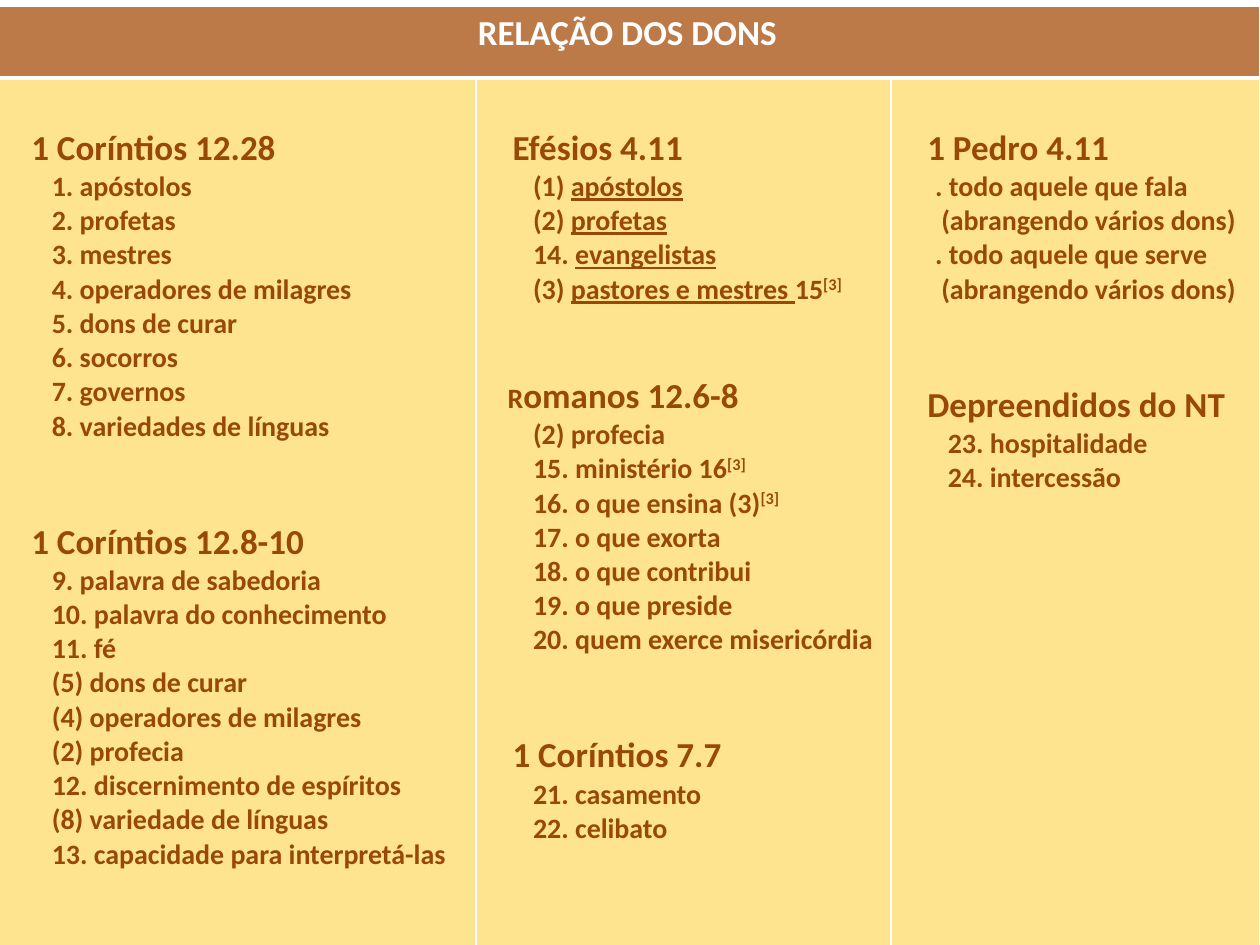
from dataclasses import dataclass

from lxml.etree import SubElement
from pptx import Presentation
from pptx.dml.color import RGBColor
from pptx.enum.text import PP_ALIGN
from pptx.oxml.ns import qn
from pptx.util import Pt


@dataclass(frozen=True)
class Theme:
    font: str = "Calibri"
    heading_size: int = 20
    item_size: int = 16
    banner: str = "BC7A48"
    panel: str = "FFE48F"
    text: str = "984807"
    white: str = "FFFFFF"


THEME = Theme()
COLUMN_WIDTHS = (275, 237, 211)
ROW_HEIGHTS = (41, 509)
CELL_TOP = 28
SECTION_GAP = 44
# Left margin and first-line indent
HEADING_INDENT = (13.6, 0)
ITEM_INDENT = (25.3, 0)
HANGING_INDENT = (21.6, -3.5)


@dataclass(frozen=True)
class Section:
    heading: str
    items: tuple
    gap: float = SECTION_GAP
    heading_indent: tuple = HEADING_INDENT
    item_indent: tuple = ITEM_INDENT
    small_initial: bool = False


@dataclass(frozen=True)
class Underlined:
    text: str


@dataclass(frozen=True)
class Superscript:
    text: str


NOTE = Superscript("[3]")

COLUMNS = (
    (
        Section("1 Coríntios 12.28", (
            "1. apóstolos", "2. profetas", "3. mestres",
            "4. operadores de milagres", "5. dons de curar", "6. socorros",
            "7. governos", "8. variedades de línguas",
        )),
        Section("1 Coríntios 12.8-10", (
            "9. palavra de sabedoria", "10. palavra do conhecimento", "11. fé",
            "(5) dons de curar", "(4) operadores de milagres", "(2) profecia",
            "12. discernimento de espíritos", "(8) variedade de línguas",
            "13. capacidade para interpretá-las",
        )),
    ),
    (
        Section("Efésios 4.11", (
            ("(1) ", Underlined("apóstolos")),
            ("(2) ", Underlined("profetas")),
            ("14. ", Underlined("evangelistas")),
            ("(3) ", Underlined("pastores e mestres "), "15", NOTE),
        )),
        Section("Romanos 12.6-8", (
            "(2) profecia", ("15. ministério 16", NOTE),
            ("16. o que ensina (3)", NOTE), "17. o que exorta",
            "18. o que contribui", "19. o que preside",
            "20. quem exerce misericórdia",
        ), gap=39, heading_indent=(10.8, 0), small_initial=True),
        Section("1 Coríntios 7.7", ("21. casamento", "22. celibato")),
    ),
    (
        Section("1 Pedro 4.11", (
            ". todo aquele que fala (abrangendo vários dons)",
            ". todo aquele que serve (abrangendo vários dons)",
        ), item_indent=HANGING_INDENT),
        Section("Depreendidos do NT", ("23. hospitalidade", "24. intercessão")),
    ),
)


def style_paragraph(paragraph, color, size=None, indent=(0, 0)):
    properties = paragraph._p.get_or_add_pPr()
    for name, value in zip(("marL", "indent"), indent):
        properties.set(name, str(Pt(value)))
    font = paragraph.font
    font.name = THEME.font
    font.bold = True
    font.color.rgb = RGBColor.from_string(color)
    if size:
        font.size = Pt(size)


def add_part(paragraph, part):
    """Add plain, underlined or superscript text as one run."""
    run = paragraph.add_run()
    run.text = part if isinstance(part, str) else part.text
    if isinstance(part, Underlined):
        run.font.underline = True
    elif isinstance(part, Superscript):
        run._r.get_or_add_rPr().set("baseline", "30000")
    return run


def write_heading(paragraph, section):
    size = None if section.small_initial else THEME.heading_size
    style_paragraph(paragraph, THEME.text, size, section.heading_indent)
    if section.small_initial:
        add_part(paragraph, section.heading[0]).font.size = Pt(THEME.item_size)
        add_part(paragraph, section.heading[1:]).font.size = Pt(THEME.heading_size)
    else:
        add_part(paragraph, section.heading)


def write_sections(cell, sections):
    cell.margin_top = Pt(CELL_TOP)
    frame = cell.text_frame
    for number, section in enumerate(sections):
        heading = frame.add_paragraph() if number else frame.paragraphs[0]
        write_heading(heading, section)
        if number:
            heading.space_before = Pt(section.gap)
        for item in section.items:
            paragraph = frame.add_paragraph()
            style_paragraph(paragraph, THEME.text, THEME.item_size, section.item_indent)
            for part in (item,) if isinstance(item, str) else item:
                add_part(paragraph, part)


def paint_cell(cell, fill, top=1, bottom=1):
    properties = cell._tc.get_or_add_tcPr()
    for side, width in (("L", 1), ("R", 1), ("T", top), ("B", bottom)):
        line = SubElement(properties, qn(f"a:ln{side}"), w=str(Pt(width)))
        line_fill = SubElement(line, qn("a:solidFill"))
        SubElement(line_fill, qn("a:srgbClr"), val=THEME.white)
    cell.fill.solid()
    cell.fill.fore_color.rgb = RGBColor.from_string(fill)


def add_gifts_table(slide):
    table = slide.shapes.add_table(
        len(ROW_HEIGHTS), len(COLUMN_WIDTHS), Pt(-2.9), Pt(3.6),
        Pt(sum(COLUMN_WIDTHS)), Pt(sum(ROW_HEIGHTS)),
    ).table
    table.first_row = table.horz_banding = False
    for column, width in zip(table.columns, COLUMN_WIDTHS):
        column.width = Pt(width)
    for row, height in zip(table.rows, ROW_HEIGHTS):
        row.height = Pt(height)

    for index, sections in enumerate(COLUMNS):
        paint_cell(table.cell(0, index), THEME.banner, bottom=3)
        paint_cell(table.cell(1, index), THEME.panel, top=3)
        write_sections(table.cell(1, index), sections)

    banner = table.cell(0, 0)
    banner.merge(table.cell(0, len(COLUMNS) - 1))
    title = banner.text_frame.paragraphs[0]
    title.alignment = PP_ALIGN.CENTER
    style_paragraph(title, THEME.white, THEME.heading_size)
    add_part(title, "RELAÇÃO DOS DONS")


def main():
    presentation = Presentation()
    presentation.slide_width = Pt(720)
    presentation.slide_height = Pt(540)
    slide = presentation.slides.add_slide(presentation.slide_layouts[6])
    add_gifts_table(slide)
    presentation.save("out.pptx")


if __name__ == "__main__":
    main()
